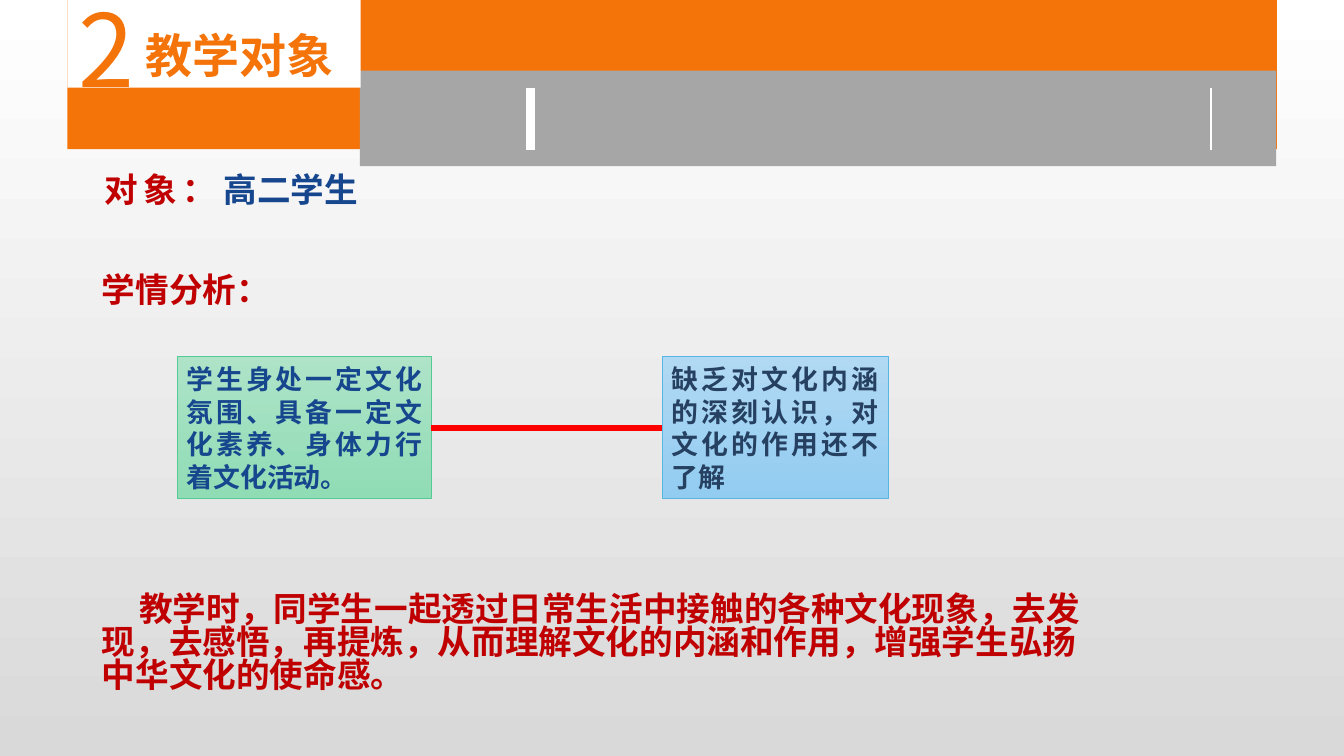
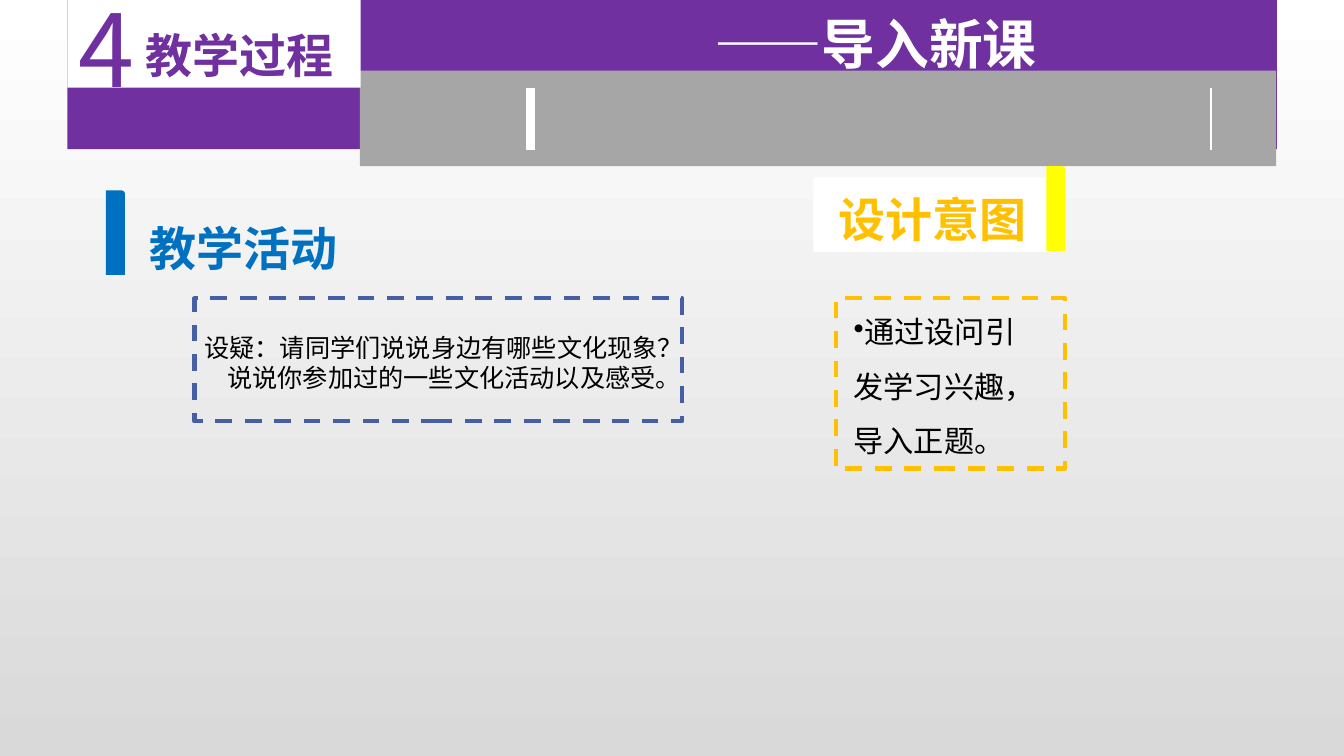
from dataclasses import dataclass, replace
from typing import NamedTuple

from lxml import etree
from pptx import Presentation
from pptx.dml.color import RGBColor
from pptx.enum.dml import MSO_LINE
from pptx.enum.shapes import MSO_CONNECTOR, MSO_SHAPE
from pptx.enum.text import MSO_ANCHOR, PP_ALIGN
from pptx.oxml.ns import qn
from pptx.shapes.base import BaseShape
from pptx.shapes.connector import Connector
from pptx.slide import Slide
from pptx.util import Cm, Pt

RECTANGLE = MSO_SHAPE.RECTANGLE
ROUND_ONE = MSO_SHAPE.ROUND_1_RECTANGLE
STRAIGHT = MSO_CONNECTOR.STRAIGHT
DASH = MSO_LINE.DASH
LEFT, CENTER, JUSTIFY = PP_ALIGN.LEFT, PP_ALIGN.CENTER, PP_ALIGN.JUSTIFY
TOP, MIDDLE, BOTTOM = MSO_ANCHOR.TOP, MSO_ANCHOR.MIDDLE, MSO_ANCHOR.BOTTOM
LEFT_SIDE, RIGHT_SIDE = 1, 3

WHITE, BLACK, GRAY, SILVER = "FFFFFF", "000000", "A6A6A6", "D9D9D9"
ORANGE, PURPLE, RED, DARK_RED = "F4740A", "7030A0", "FF0000", "C00000"
NAVY, BLUE, GOLD, YELLOW = "16468D", "0070C0", "FFC000", "FFFF00"
SANS = "Noto Sans CJK SC"


class Area(NamedTuple):
    left: float
    top: float
    width: float
    height: float


class Outline(NamedTuple):
    color: str
    width: float
    dashed: bool = False


@dataclass(frozen=True)
class TextStyle:
    size: float
    color: str
    bold: bool = True
    font: str = SANS
    align: PP_ALIGN = LEFT
    spacing: float | Pt | None = None
    anchor: MSO_ANCHOR = TOP
    left_inset: float = 0.25
    right_inset: float = 0.25
    top_inset: float = 0.13
    bullet: str = ""


@dataclass(frozen=True)
class Line:
    text: str
    indent: float = 0


@dataclass(frozen=True)
class Note:
    area: Area
    style: TextStyle
    lines: tuple[Line, ...]


@dataclass(frozen=True)
class Card:
    area: Area
    top_color: str
    bottom_color: str
    border: str
    text_color: str
    text: str


@dataclass(frozen=True)
class Heading:
    area: Area
    bar_left: float
    bar_top: float
    bar_color: str
    panel: str
    style: TextStyle
    text: str


BODY = TextStyle(24, DARK_RED, spacing=Pt(23.4), left_inset=0.23, right_inset=0.23)
HEADING = TextStyle(33.6, BLUE, font="Roboto", spacing=1.14, anchor=MIDDLE)
PLAIN = TextStyle(18, BLACK, bold=False, font="Arial")

LEARNER_NOTES = (
    Note(Area(2.41, 4.32, 2.41, 1.07), replace(BODY, align=JUSTIFY), (Line("对象："),)),
    Note(Area(5.41, 4.32, 15.37, 1.07), replace(BODY, color=NAVY, align=JUSTIFY),
         (Line("高二学生"),)),
    Note(Area(2.34, 6.83, 4.32, 1.07), BODY, (Line("学情分析："),)),
    Note(Area(2.34, 14.88, 25.83, 2.74), BODY,
         (Line("教学时，同学生一起透过日常生活中接触的各种文化现象，去发现，去感悟，"
               "再提炼，从而理解文化的内涵和作用，增强学生弘扬中华文化的使命感。", 0.94),)),
)
STRENGTH = Card(Area(4.47, 8.99, 6.4, 3.58), "AEE3C8", "90DCB5", "56CA95", NAVY,
                "学生身处一定文化氛围、具备一定文化素养、身体力行着文化活动。")
WEAKNESS = Card(Area(16.69, 8.99, 5.69, 3.58), "B1D9F3", "92CCF1", "58B6E5", "254061",
                "缺乏对文化内涵的深刻认识，对文化的作用还不了解")

LESSON_HEADINGS = (
    Heading(Area(3.51, 5.21, 18.62, 1.88), 2.67, 4.8, BLUE, "", HEADING, "教学活动"),
    Heading(Area(20.5, 4.47, 5.99, 1.88), 26.37, 4.19, YELLOW, WHITE,
            replace(HEADING, color=GOLD, align=CENTER), "设计意图"),
)
LESSON_FRAMES = (
    (Area(4.9, 7.52, 12.29, 3.1), Outline("465EA4", 3, True)),
    (Area(21.06, 7.52, 5.79, 4.29), Outline(GOLD, 3, True)),
)
LESSON_NOTES = (
    Note(Area(15.9, 0.15, 12.32, 1.9), TextStyle(38.4, WHITE, align=CENTER),
         (Line("——导入新课"),)),
    Note(Area(21.26, 7.32, 5.23, 4.39),
         replace(PLAIN, size=21.6, spacing=1.5, bullet="•"),
         (Line("通过设问引发学习兴趣，导入正题。"),)),
    Note(Area(4.9, 7.52, 12.67, 2.57), replace(PLAIN, top_inset=0.86),
         (Line("设疑：请同学们说说身边有哪些文化现象？"),
          Line("说说你参加过的一些文化活动以及感受。", 0.58))),
)


def rgb(color: str) -> RGBColor:
    return RGBColor.from_string(color)


def set_gradient(fill, first: str, last: str) -> None:
    fill.gradient()
    fill.gradient_angle = 270
    for stop, color in zip(fill.gradient_stops, (first, last)):
        stop.color.rgb = rgb(color)


def place(area: Area) -> tuple[Cm, ...]:
    return tuple(Cm(length) for length in area)


def add_box(page: Slide, area: Area, fill: str = "", outline: Outline | None = None,
            preset: MSO_SHAPE = RECTANGLE) -> BaseShape:
    box = page.shapes.add_shape(preset, *place(area))
    box.shadow.inherit = False
    if fill:
        box.fill.solid()
        box.fill.fore_color.rgb = rgb(fill)
    else:
        box.fill.background()
    if outline:
        box.line.color.rgb = rgb(outline.color)
        box.line.width = Pt(outline.width)
        if outline.dashed:
            box.line.dash_style = DASH
    else:
        box.line.fill.background()
    return box


def write(box: BaseShape, style: TextStyle, lines: tuple[Line, ...]) -> None:
    frame = box.text_frame
    frame.word_wrap = True
    frame.vertical_anchor = style.anchor
    frame.margin_left, frame.margin_right = Cm(style.left_inset), Cm(style.right_inset)
    frame.margin_top, frame.margin_bottom = Cm(style.top_inset), Cm(0.13)
    for index, line in enumerate(lines):
        para = frame.add_paragraph() if index else frame.paragraphs[0]
        para.alignment = style.align
        if style.spacing is not None:
            para.line_spacing = style.spacing
        span = para.add_run()
        span.text = line.text
        span.font.name = style.font
        span.font.size = Pt(style.size)
        span.font.bold = style.bold
        span.font.color.rgb = rgb(style.color)
        latin = span.font._element.find(qn("a:latin"))
        east_asian = etree.Element(qn("a:ea"), typeface=style.font)
        latin.addnext(east_asian)
        properties = para._p.get_or_add_pPr()
        properties.set("marL", "0")
        properties.set("indent", str(int(Cm(line.indent))))
        if style.bullet:
            etree.SubElement(properties, qn("a:buChar"), char=style.bullet)


def add_note(page: Slide, note: Note) -> None:
    write(page.shapes.add_textbox(*place(note.area)), note.style, note.lines)


def add_line(page: Slide, start: tuple[float, float], end: tuple[float, float],
             color: str, width: float) -> Connector:
    line = page.shapes.add_connector(STRAIGHT, *(Cm(value) for value in start + end))
    line.line.color.rgb = rgb(color)
    line.line.width = Pt(width)
    etree.SubElement(line._element.spPr, qn("a:effectLst"))
    return line


def add_card(page: Slide, card: Card) -> BaseShape:
    box = add_box(page, card.area, outline=Outline(card.border, 0.5))
    set_gradient(box.fill, card.top_color, card.bottom_color)
    write(box, replace(BODY, size=19.2, color=card.text_color, align=JUSTIFY),
          (Line(card.text),))
    return box


def add_heading(page: Slide, heading: Heading) -> None:
    box = add_box(page, heading.area, heading.panel)
    write(box, heading.style, (Line(heading.text),))
    add_box(page, Area(heading.bar_left, heading.bar_top, 0.48, 2.13),
            heading.bar_color, preset=ROUND_ONE)


def add_page(deck, number: str, title: str, accent: str) -> Slide:
    page = deck.slides.add_slide(deck.slide_layouts[6])
    set_gradient(page.background.fill, WHITE, SILVER)
    add_box(page, Area(1.7, -0.08, 30.48, 3.84), accent)
    add_box(page, Area(9.07, 1.78, 23.09, 2.41), GRAY)
    for left, width in ((13.36, 6.5), (30.51, 1.5)):
        add_line(page, (left, 2.21), (left, 3.78), WHITE, width)
    panel = add_box(page, Area(1.7, -0.2, 7.39, 2.41), WHITE)
    write(panel, TextStyle(33.6, accent, align=CENTER, spacing=1.5, anchor=BOTTOM,
                           left_inset=1.52), (Line(title),))
    add_note(page, Note(Area(1.73, -0.46, 1.78, 3.33),
                        TextStyle(72, accent, bold=False), (Line(number),)))
    return page


def build_learners(deck) -> None:
    page = add_page(deck, "2", "教学对象", ORANGE)
    for note in LEARNER_NOTES:
        add_note(page, note)
    strength = add_card(page, STRENGTH)
    weakness = add_card(page, WEAKNESS)
    link = add_line(page, (10.87, 10.78), (16.69, 10.78), RED, 4.5)
    link.begin_connect(strength, RIGHT_SIDE)
    link.end_connect(weakness, LEFT_SIDE)


def build_lesson(deck) -> None:
    page = add_page(deck, "4", "教学过程", PURPLE)
    for heading in LESSON_HEADINGS:
        add_heading(page, heading)
    for area, outline in LESSON_FRAMES:
        add_box(page, area, outline=outline)
    for note in LESSON_NOTES:
        add_note(page, note)


def main() -> None:
    deck = Presentation()
    deck.slide_width, deck.slide_height = Cm(33.87), Cm(19.05)
    build_learners(deck)
    build_lesson(deck)
    deck.save("out.pptx")


if __name__ == "__main__":
    main()
